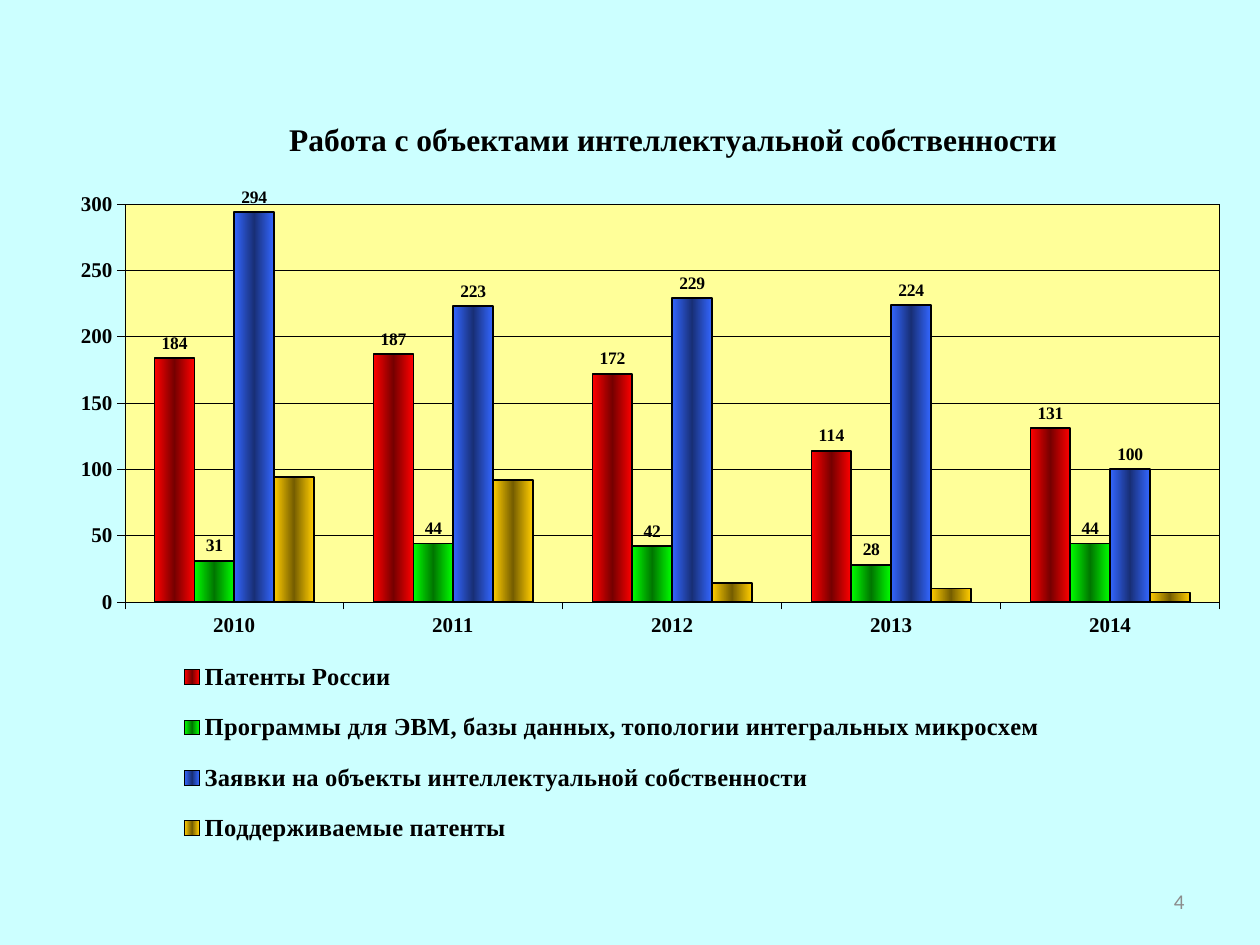
import pptx
import pptx.chart.data
import pptx.dml.color
import pptx.enum.chart
import pptx.enum.text
import pptx.oxml
import pptx.oxml.ns
import pptx.util

Cm = pptx.util.Cm
Pt = pptx.util.Pt
SERIF = "Times New Roman"
YEARS = ["2010", "2011", "2012", "2013", "2014"]
SERIES = [
    ("Патенты России", [184, 187, 172, 114, 131], "FF0000", "760000"),
    ("Программы для ЭВМ, базы данных, топологии интегральных микросхем",
     [31, 44, 42, 28, 44], "00FF00", "007600"),
    ("Заявки на объекты интеллектуальной собственности",
     [294, 223, 229, 224, 100], "3366FF", "182F76"),
    ("Поддерживаемые патенты", [94, 92, 14, 10, 7], "FFCC00", "765E00"),
]


def paint(color, shade):
    color.rgb = pptx.dml.color.RGBColor.from_string(shade)


def style(font, size, name=SERIF, shade="000000", bold=True):
    font.size = Pt(size)
    font.name = name
    font.bold = bold
    paint(font.color, shade)


def write(frame, text, align=None, **look):
    para = frame.paragraphs[0]
    para.alignment = align
    run = para.add_run()
    run.text = text
    style(run.font, **look)


def stroke(line, width):
    paint(line.color, "000000")
    line.width = Pt(width)


def make(body):
    spaces = pptx.oxml.ns.nsdecls("c", "a")
    tag, rest = body.split(">", 1)
    return pptx.oxml.parse_xml(f"{tag} {spaces}>{rest}")


def place(node, index, **box):
    for old in node.xpath("./c:layout"):
        node.remove(old)
    inner = '<c:layoutTarget val="inner"/>' if index == 0 else ""
    modes = "".join(f'<c:{key}Mode val="edge"/>' for key in "xy")
    sizes = "".join(f'<c:{key} val="{val}"/>' for key, val in box.items())
    node.insert(index, make(
        f"<c:layout><c:manualLayout>{inner}{modes}{sizes}"
        "</c:manualLayout></c:layout>"))


def panel(shade, line):
    return make(
        f'<c:spPr><a:solidFill><a:srgbClr val="{shade}"/></a:solidFill>'
        f"{line}</c:spPr>")


def blend(series, edge, core):
    series.format.fill.background()
    stops = "".join(
        f'<a:gs pos="{spot}"><a:srgbClr val="{shade}"/></a:gs>'
        for spot, shade in ((0, edge), (50000, core), (100000, edge)))
    grad = make(
        f"<a:gradFill><a:gsLst>{stops}</a:gsLst>"
        '<a:lin ang="0" scaled="1"/></a:gradFill>')
    node = series._element.xpath("./c:spPr/a:noFill")[0]
    node.getparent().replace(node, grad)


def add_labels(series):
    labels = series.data_labels
    labels.show_value = True
    labels.position = pptx.enum.chart.XL_LABEL_POSITION.OUTSIDE_END
    style(labels.font, 10)


def set_axis(axis):
    axis.major_tick_mark = pptx.enum.chart.XL_TICK_MARK.OUTSIDE
    axis.minor_tick_mark = pptx.enum.chart.XL_TICK_MARK.NONE
    style(axis.tick_labels.font, 12)
    stroke(axis.format.line, 0.25)


def set_plot(chart):
    plot = chart.plots[0]
    plot.gap_width = 150
    plot.overlap = 0
    plot.vary_by_categories = False
    for series, (_, _, edge, core) in zip(plot.series, SERIES):
        blend(series, edge, core)
        stroke(series.format.line, 1)
        series.invert_if_negative = False
    for series in list(plot.series)[:3]:
        add_labels(series)
    set_axis(chart.category_axis)
    scale = chart.value_axis
    set_axis(scale)
    scale.minimum_scale = 0
    scale.maximum_scale = 300
    scale.major_unit = 50
    scale.has_major_gridlines = True
    stroke(scale.major_gridlines.format.line, 0.25)


def add_chart(slide, width, height):
    data = pptx.chart.data.CategoryChartData()
    data.categories = YEARS
    for name, vals, _, _ in SERIES:
        data.add_series(name, vals)
    kind = pptx.enum.chart.XL_CHART_TYPE.COLUMN_CLUSTERED
    chart = slide.shapes.add_chart(
        kind, Cm(0), Cm(0), width, height, data).chart
    style(chart.font, 12, name="Arial", bold=False)
    set_plot(chart)
    chart.has_title = True
    write(chart.chart_title.text_frame,
          "Работа с объектами интеллектуальной собственности", size=18)
    chart.has_legend = True
    legend = chart.legend
    legend.position = pptx.enum.chart.XL_LEGEND_POSITION.BOTTOM
    legend.include_in_layout = False
    style(legend.font, 14)
    root = chart.element
    area = root.xpath("./c:chart/c:plotArea")[0]
    place(root.xpath("./c:chart/c:title")[0], 1, x=0.225, y=0.121)
    place(area, 0, x=0.099, y=0.216, w=0.869, h=0.421)
    place(root.xpath("./c:chart/c:legend")[0], 1,
          x=0.131, y=0.678, w=0.71, h=0.237)
    area.append(panel(
        "FFFF99", '<a:ln w="3175"><a:solidFill><a:srgbClr val="000000"/>'
        "</a:solidFill></a:ln>"))
    root.xpath("./c:chart")[0].addnext(
        panel("CCFFFF", "<a:ln><a:noFill/></a:ln>"))


def add_number(slide):
    box = slide.shapes.add_textbox(Cm(18.2), Cm(17.65), Cm(5.93), Cm(1.02))
    frame = box.text_frame
    frame.word_wrap = True
    frame.vertical_anchor = pptx.enum.text.MSO_ANCHOR.MIDDLE
    write(frame, "4", align=pptx.enum.text.PP_ALIGN.RIGHT, size=12,
          name="Calibri", shade="8C8C8C", bold=False)


def main():
    deck = pptx.Presentation()
    deck.slide_width = Cm(25.4)
    deck.slide_height = Cm(19.05)
    slide = deck.slides.add_slide(deck.slide_layouts[6])
    add_chart(slide, deck.slide_width, deck.slide_height)
    add_number(slide)
    deck.save("out.pptx")


if __name__ == "__main__":
    main()
